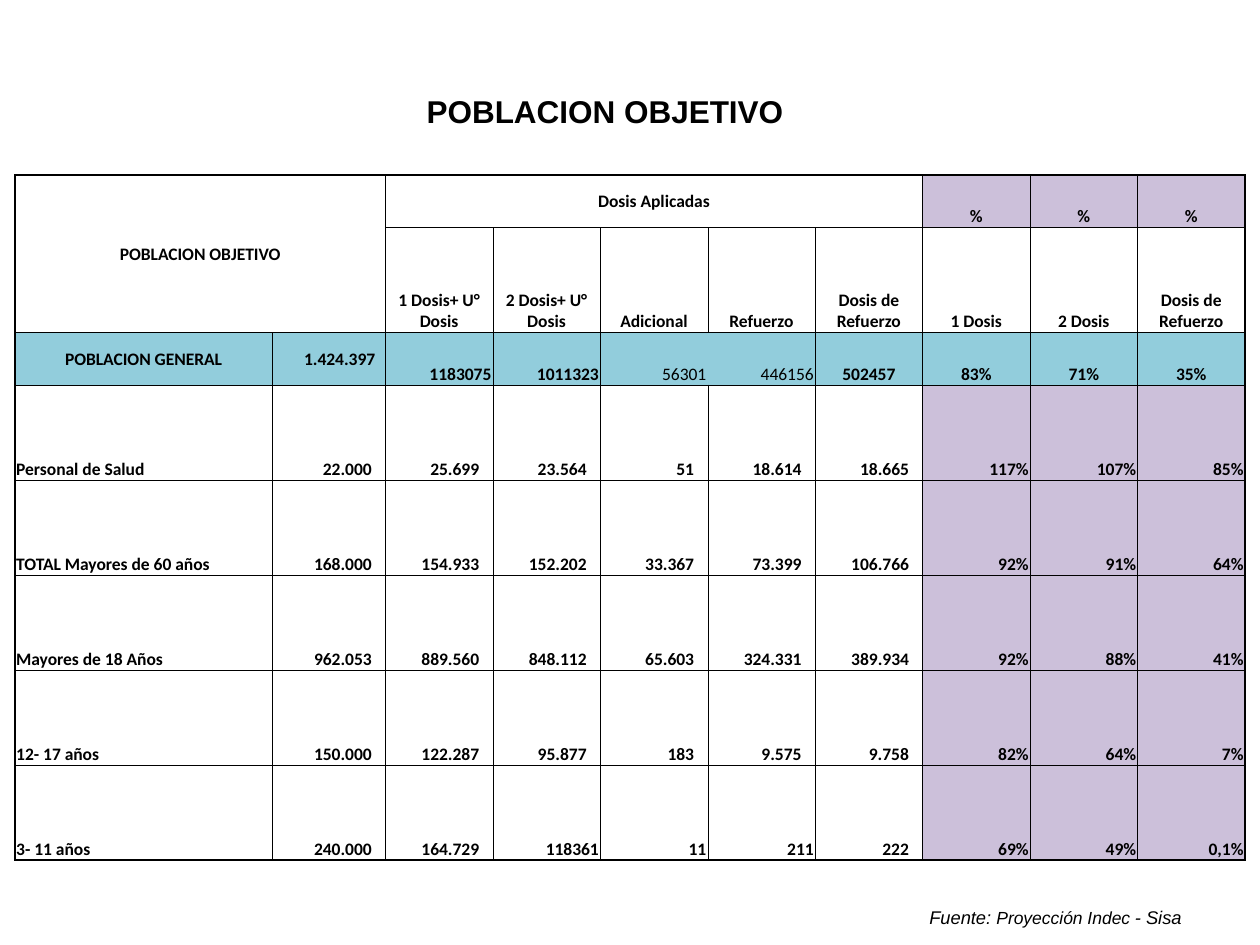
from lxml.etree import SubElement
from pptx import Presentation
from pptx.dml.color import RGBColor
from pptx.enum.text import MSO_ANCHOR as Anchor, MSO_AUTO_SIZE as AutoSize, PP_ALIGN as Align
from pptx.oxml.ns import qn
from pptx.util import Pt

BLACK = RGBColor(0x00, 0x00, 0x00)
LILAC = RGBColor(0xCC, 0xC0, 0xDA)
TEAL = RGBColor(0x92, 0xCD, 0xDC)

COLUMN_WIDTHS = [147.2, 64.6] + [61.4] * 8
ROW_HEIGHTS = [30, 60, 30] + [54.3] * 5
GENERAL_ROW = 2
FIRST_PERCENT = 7
ADDITIONAL, BOOSTER = 4, 5
NUMBER_INDENT = 8

ROWS = [
    ["POBLACION OBJETIVO", "", "Dosis Aplicadas", "", "", "", "", "%", "%", "%"],
    ["", "", "1 Dosis+ U° Dosis", "2 Dosis+ U° Dosis", "Adicional", "Refuerzo",
     "Dosis de Refuerzo", "1 Dosis", "2 Dosis", "Dosis de Refuerzo"],
    ["POBLACION GENERAL", "1.424.397", "1183075", "1011323", "56301", "446156",
     "502457", "83%", "71%", "35%"],
    ["Personal de Salud", "22.000", "25.699", "23.564", "51", "18.614",
     "18.665", "117%", "107%", "85%"],
    ["TOTAL Mayores de 60 años", "168.000", "154.933", "152.202", "33.367", "73.399",
     "106.766", "92%", "91%", "64%"],
    ["Mayores de 18 Años", "962.053", "889.560", "848.112", "65.603", "324.331",
     "389.934", "92%", "88%", "41%"],
    ["12- 17 años", "150.000", "122.287", "95.877", "183", "9.575",
     "9.758", "82%", "64%", "7%"],
    ["3- 11 años", "240.000", "164.729", "118361", "11", "211",
     "222", "69%", "49%", "0,1%"],
]
LAST_ROW, LAST_COLUMN = len(ROWS) - 1, len(COLUMN_WIDTHS) - 1


def cell_fill(row, column):
    if row == GENERAL_ROW:
        return TEAL
    if column >= FIRST_PERCENT and row != 1:
        return LILAC
    return None


def cell_layout(row, column):
    if row < GENERAL_ROW:
        middle = row == 0 and column < FIRST_PERCENT
        return Align.CENTER, Anchor.MIDDLE if middle else Anchor.BOTTOM, 1
    if row == GENERAL_ROW:
        if column == 1:
            return Align.RIGHT, Anchor.MIDDLE, 6
        align = Align.RIGHT if 2 <= column <= BOOSTER else Align.CENTER
        return align, Anchor.MIDDLE if column == 0 else Anchor.BOTTOM, 1
    if column == 0:
        return Align.LEFT, Anchor.BOTTOM, 1
    flush = column >= FIRST_PERCENT or (row == LAST_ROW and 3 <= column <= BOOSTER)
    return Align.RIGHT, Anchor.BOTTOM, 1 if flush else NUMBER_INDENT


def cell_borders(row, column):
    borders = {
        "a:lnL": 1 if column == 0 else 0.5,
        "a:lnR": 1 if column == LAST_COLUMN else 0.5,
        "a:lnT": 1 if row == 0 else 0.5,
        "a:lnB": 1 if row == LAST_ROW else 0.5,
    }
    if row == GENERAL_ROW and column == ADDITIONAL:
        borders["a:lnR"] = 0
    if row == GENERAL_ROW and column == BOOSTER:
        borders["a:lnL"] = 0
    return borders


class SlideWriter:
    heading_font = "Arial"
    table_font = "Calibri"
    table_size = 10

    def __init__(self, page):
        self.page = page

    def style(self, span, name, size, bold=False, italic=False):
        font = span.font
        font.name, font.size = name, Pt(size)
        font.bold, font.italic = bold, italic
        font.color.rgb = BLACK

    def place(self, box, left, top, width, height):
        box.left, box.top, box.width, box.height = map(Pt, (left, top, width, height))

    def title(self, text, *bounds):
        box = self.page.shapes.title
        self.place(box, *bounds)
        frame = box.text_frame
        frame.text = text
        frame.vertical_anchor = Anchor.TOP
        frame.auto_size = AutoSize.SHAPE_TO_FIT_TEXT
        para = frame.paragraphs[0]
        para.alignment = Align.CENTER
        self.style(para.runs[0], self.heading_font, 18, bold=True)

    def source_note(self, pieces, *bounds):
        box = self.page.shapes.add_textbox(*map(Pt, bounds))
        frame = box.text_frame
        frame.word_wrap = True
        frame.auto_size = AutoSize.SHAPE_TO_FIT_TEXT
        for text, size in pieces:
            span = frame.paragraphs[0].add_run()
            span.text = text
            self.style(span, self.heading_font, size, italic=True)

    def border(self, cell, edge, width):
        properties = cell._tc.get_or_add_tcPr()
        line = SubElement(properties, qn(edge), w=str(Pt(width)))
        if width:
            fill = SubElement(line, qn("a:solidFill"))
            SubElement(fill, qn("a:srgbClr"), val=str(BLACK))
        else:
            SubElement(line, qn("a:noFill"))

    def cell(self, cell, text, row, column):
        for edge, width in cell_borders(row, column).items():
            self.border(cell, edge, width)
        color = cell_fill(row, column)
        if color is None:
            cell.fill.background()
        else:
            cell.fill.solid()
            cell.fill.fore_color.rgb = color
        align, anchor, indent = cell_layout(row, column)
        cell.vertical_anchor = anchor
        cell.margin_left = cell.margin_top = Pt(0.7)
        cell.margin_right, cell.margin_bottom = Pt(indent), Pt(0)
        if text:
            cell.text_frame.text = text
            para = cell.text_frame.paragraphs[0]
            para.alignment = align
            plain = row == GENERAL_ROW and column in (ADDITIONAL, BOOSTER)
            self.style(para.runs[0], self.table_font, self.table_size, bold=not plain)

    def table(self, rows, left, top):
        bounds = (left, top, sum(COLUMN_WIDTHS), sum(ROW_HEIGHTS))
        table = self.page.shapes.add_table(
            len(rows), len(COLUMN_WIDTHS), *map(Pt, bounds)).table
        table.first_row = table.horz_banding = False
        for column, width in zip(table.columns, COLUMN_WIDTHS):
            column.width = Pt(width)
        for row, height in zip(table.rows, ROW_HEIGHTS):
            row.height = Pt(height)
        table.cell(0, 0).merge(table.cell(1, 1))
        table.cell(0, 2).merge(table.cell(0, FIRST_PERCENT - 1))
        for row, texts in enumerate(rows):
            for column, text in enumerate(texts):
                self.cell(table.cell(row, column), text, row, column)


def main():
    deck = Presentation()
    deck.slide_width, deck.slide_height = Pt(720), Pt(540)
    writer = SlideWriter(deck.slides.add_slide(deck.slide_layouts[5]))
    writer.title("POBLACION OBJETIVO", 144.5, 49, 402.5, 29)
    writer.source_note(
        [("Fuente: ", 10.5), ("Proyección Indec ", 10), ("- Sisa", 10.5)],
        524, 514, 227, 21)
    writer.table(ROWS, 8.6, 100)
    deck.save("out.pptx")


if __name__ == "__main__":
    main()
